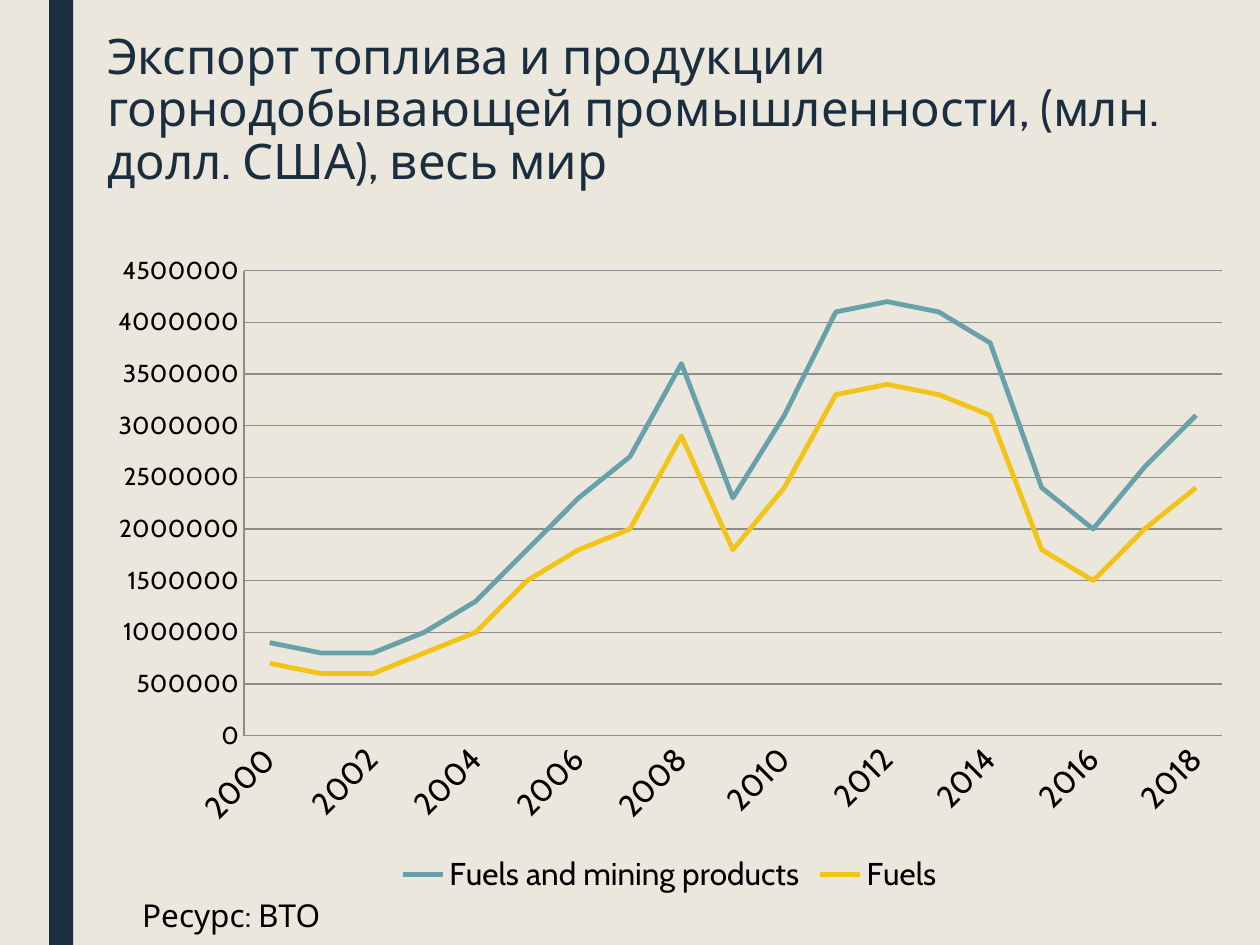
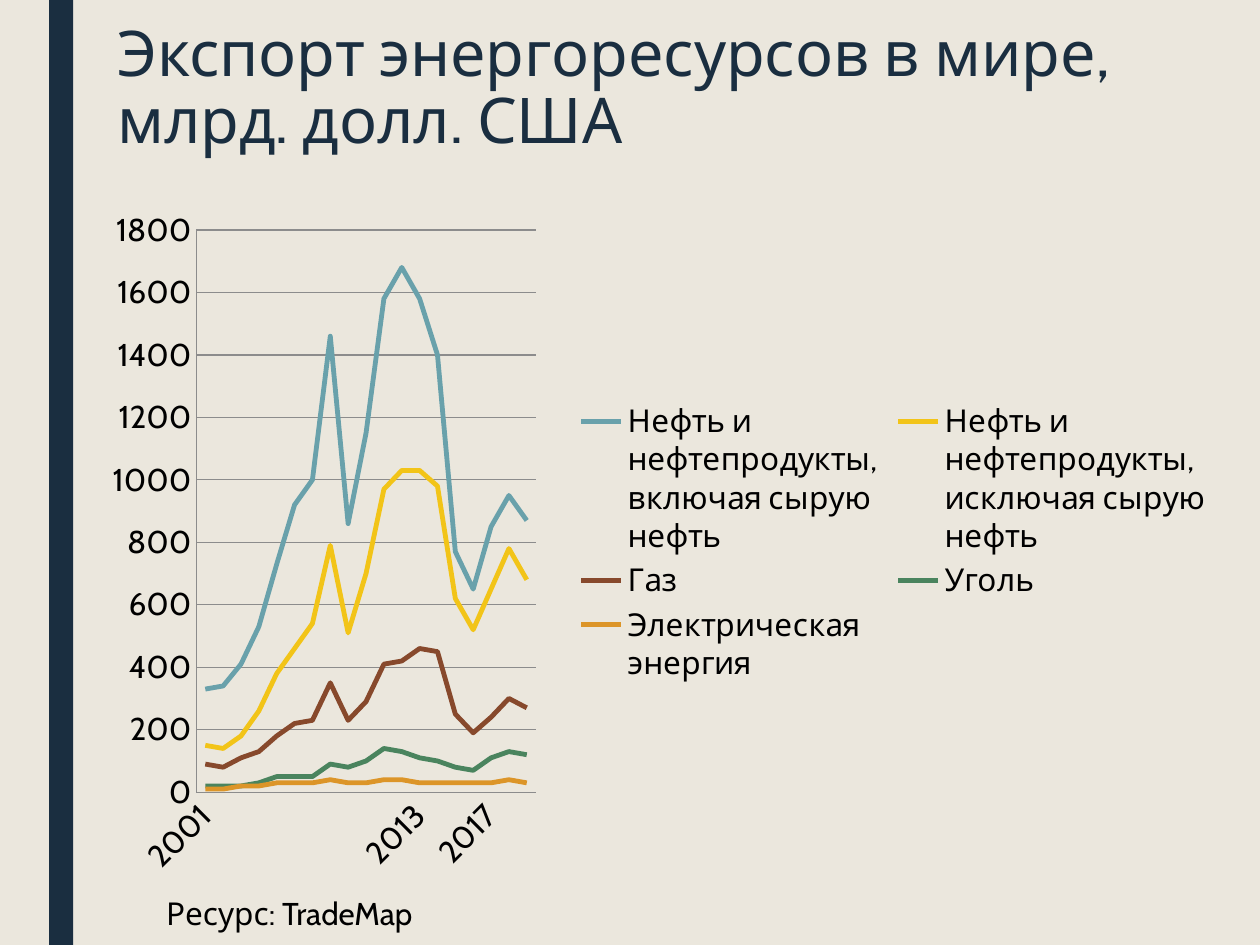
from dataclasses import dataclass

from lxml import etree
from pptx import Presentation
from pptx.chart.data import CategoryChartData
from pptx.dml.color import RGBColor
from pptx.enum.chart import XL_CHART_TYPE, XL_LEGEND_POSITION, XL_TICK_MARK
from pptx.enum.shapes import MSO_SHAPE
from pptx.enum.text import MSO_ANCHOR, MSO_AUTO_SIZE, PP_ALIGN
from pptx.oxml.ns import qn
from pptx.util import Inches, Pt

LINE = XL_CHART_TYPE.LINE
BOTTOM, RIGHT = XL_LEGEND_POSITION.BOTTOM, XL_LEGEND_POSITION.RIGHT
NO_TICK = XL_TICK_MARK.NONE
LEFT, TOP = PP_ALIGN.LEFT, MSO_ANCHOR.TOP
FIXED, GROW = MSO_AUTO_SIZE.NONE, MSO_AUTO_SIZE.SHAPE_TO_FIT_TEXT
LABEL_TURN = "-2700000"  # 45 degrees counter-clockwise


@dataclass(frozen=True)
class Theme:
    font: str = "Cabin"
    paper: RGBColor = RGBColor.from_string("EBE7DD")
    navy: RGBColor = RGBColor.from_string("1A2E40")
    black: RGBColor = RGBColor.from_string("000000")
    grid: RGBColor = RGBColor.from_string("8C8C8C")
    series: tuple = ("69A1AB", "F2C418", "87492C", "4A845E", "DC9528")
    body: int = 18
    line: float = 2.75
    hairline: float = 0.75


theme = Theme()


def grid(*cells):
    """Turn cells of the 100 x 75 slide grid into lengths."""
    return [int(cell * Inches(0.1)) for cell in cells]


def write(box, text, size, color, spacing=1.0, fit=FIXED):
    """Fill a box with one left-aligned paragraph."""
    frame = box.text_frame
    frame.text = text
    frame.word_wrap = True
    frame.auto_size = fit
    frame.vertical_anchor = TOP
    para = frame.paragraphs[0]
    para.alignment = LEFT
    para.line_spacing = spacing
    font = para.runs[0].font
    font.name, font.size, font.color.rgb = theme.font, Pt(size), color


# Content of the pages; chart values are scaled by "unit"
pages = [
    dict(
        title="Экспорт топлива и продукции горнодобывающей промышленности, (млн. долл. США), весь мир",
        title_size=28, title_at=(7.5, 2.1, 89.8, 16.2),
        chart_at=(7.5, 19.4, 91.3, 52), plot=(0.13, 0.04, 0.85, 0.71),
        first_year=2000, unit=100000, top=4500000, step=500000,
        value_size=14, value_format="General", label_skip=2, legend=BOTTOM,
        series={
            "Fuels and mining products":
                [9, 8, 8, 10, 13, 18, 23, 27, 36, 23, 31, 41, 42, 41, 38, 24, 20, 26, 31],
            "Fuels":
                [7, 6, 6, 8, 10, 15, 18, 20, 29, 18, 24, 33, 34, 33, 31, 18, 15, 20, 24],
        },
        source="Ресурс: ВТО", source_at=(10.3, 70.6, 24.4, 4),
    ),
    dict(
        title="Экспорт энергоресурсов в мире, млрд. долл. США",
        title_size=36, title_at=(8.3, 1.3, 90.6, 16.2),
        chart_at=(7.5, 15.5, 89.8, 55.1), plot=(0.09, 0.05, 0.3, 0.81),
        first_year=2001, unit=10, top=1800, step=200,
        value_size=18, value_format="0", label_skip=3, legend=RIGHT,
        series={
            "Нефть и нефтепродукты, включая сырую нефть":
                [33, 34, 41, 53, 73, 92, 100, 146, 86, 115, 158, 168, 158, 140, 77, 65, 85, 95, 87],
            "Нефть и нефтепродукты, исключая сырую нефть":
                [15, 14, 18, 26, 38, 46, 54, 79, 51, 70, 97, 103, 103, 98, 62, 52, 65, 78, 68],
            "Газ":
                [9, 8, 11, 13, 18, 22, 23, 35, 23, 29, 41, 42, 46, 45, 25, 19, 24, 30, 27],
            "Уголь":
                [2, 2, 2, 3, 5, 5, 5, 9, 8, 10, 14, 13, 11, 10, 8, 7, 11, 13, 12],
            "Электрическая энергия":
                [1, 1, 2, 2, 3, 3, 3, 4, 3, 3, 4, 4, 3, 3, 3, 3, 3, 4, 3],
        },
        source="Ресурс: TradeMap", source_at=(12.2, 70.5, 27.6, 4),
    ),
]

# Deck and shared background
deck = Presentation()
deck.slide_width, deck.slide_height = grid(100, 75)
background = deck.slide_master.background.fill
background.solid()
background.fore_color.rgb = theme.paper
title_only = deck.slide_layouts[5]

for content in pages:
    page = deck.slides.add_slide(title_only)

    # Side band
    band = page.shapes.add_shape(MSO_SHAPE.RECTANGLE, *grid(3.9, 0, 1.9, 75))
    band.shadow.inherit = False
    band.fill.solid()
    band.fill.fore_color.rgb = theme.navy
    band.line.fill.background()

    # Title
    title = page.shapes.title
    title.left, title.top, title.width, title.height = grid(*content["title_at"])
    write(title, content["title"], content["title_size"], theme.navy, spacing=0.89)

    # Chart data
    data = CategoryChartData()
    count = len(next(iter(content["series"].values())))
    data.categories = [str(content["first_year"] + year) for year in range(count)]
    for name, values in content["series"].items():
        data.add_series(name, [value * content["unit"] for value in values])
    chart = page.shapes.add_chart(LINE, *grid(*content["chart_at"]), data).chart

    # Chart text and legend
    chart.has_title = False
    chart.font.name = theme.font
    chart.font.size = Pt(theme.body)
    chart.font.color.rgb = theme.black
    chart.has_legend = True
    chart.legend.position = content["legend"]
    chart.legend.include_in_layout = False

    # Series lines
    chart.plots[0].vary_by_categories = False
    for series, color in zip(chart.plots[0].series, theme.series):
        series.smooth = False
        series.format.line.width = Pt(theme.line)
        series.format.line.color.rgb = RGBColor.from_string(color)

    # Axes and gridlines
    years, amounts = chart.category_axis, chart.value_axis
    amounts.minimum_scale, amounts.maximum_scale = 0, content["top"]
    amounts.major_unit = content["step"]
    amounts.has_major_gridlines = True
    amounts.tick_labels.number_format = content["value_format"]
    amounts.tick_labels.number_format_is_linked = False
    amounts.tick_labels.font.size = Pt(content["value_size"])
    years.tick_labels.font.size = Pt(theme.body)
    for axis in (years, amounts):
        axis.major_tick_mark = axis.minor_tick_mark = NO_TICK
    for rule in (years, amounts, amounts.major_gridlines):
        rule.format.line.width = Pt(theme.hairline)
        rule.format.line.color.rgb = theme.grid

    # Slanted year labels, thinned out
    axis_xml = chart.plots[0]._element.getparent().find(qn("c:catAx"))
    axis_xml.find(qn("c:txPr")).find(qn("a:bodyPr")).set("rot", LABEL_TURN)
    skip = etree.Element(qn("c:tickLblSkip"), val=str(content["label_skip"]))
    axis_xml.find(qn("c:noMultiLvlLbl")).addprevious(skip)

    # Plot area as shares of the chart
    plot_area = axis_xml.getparent()
    for old_layout in plot_area.findall(qn("c:layout")):
        plot_area.remove(old_layout)
    layout = etree.Element(qn("c:layout"))
    plot_area.insert(0, layout)
    manual = etree.SubElement(layout, qn("c:manualLayout"))
    settings = [("layoutTarget", "inner"), ("xMode", "edge"), ("yMode", "edge")]
    settings += zip("xywh", content["plot"])
    for tag, value in settings:
        etree.SubElement(manual, qn(f"c:{tag}"), val=str(value))

    # Source line
    source = page.shapes.add_textbox(*grid(*content["source_at"]))
    write(source, content["source"], theme.body, theme.black, fit=GROW)

deck.save("out.pptx")
